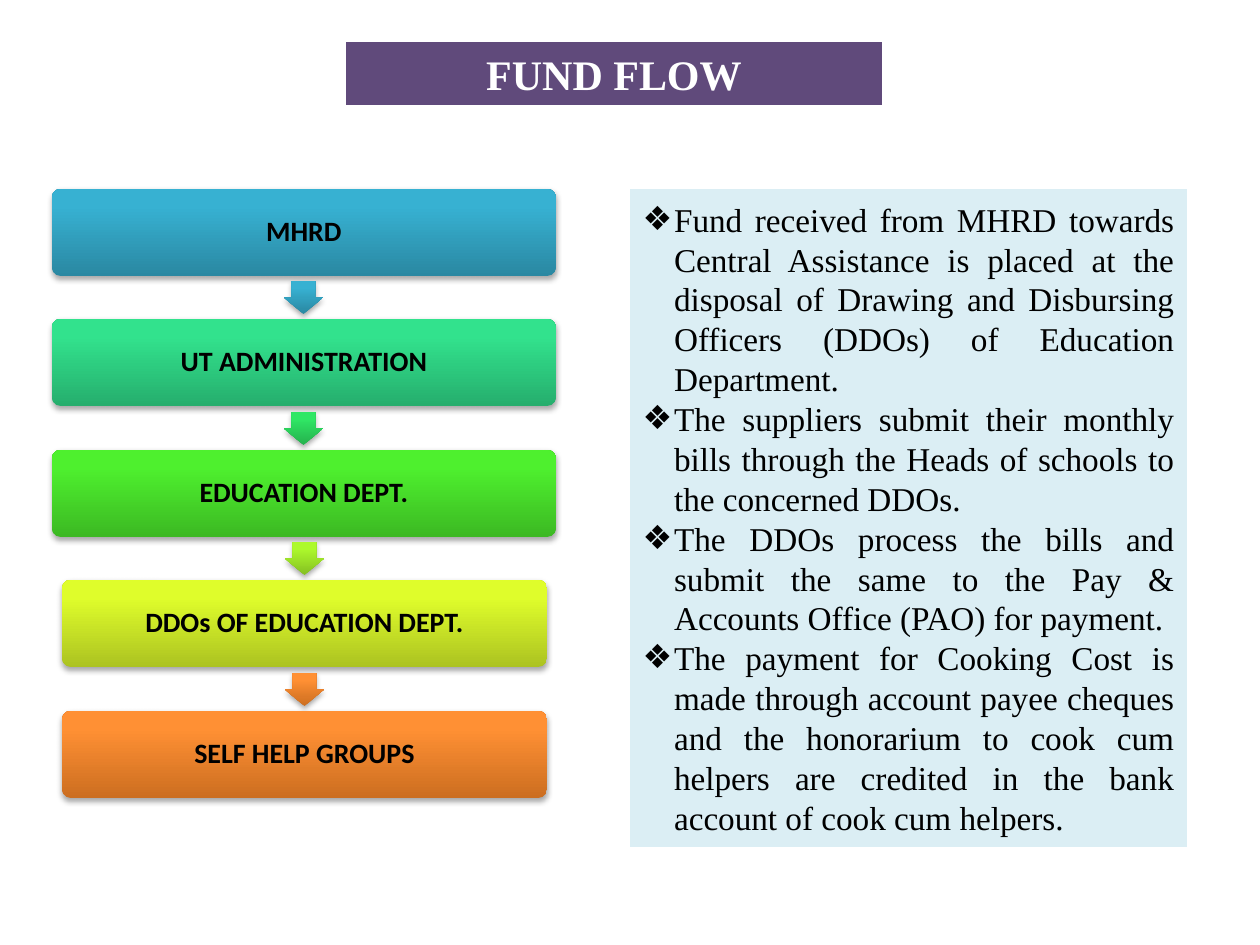
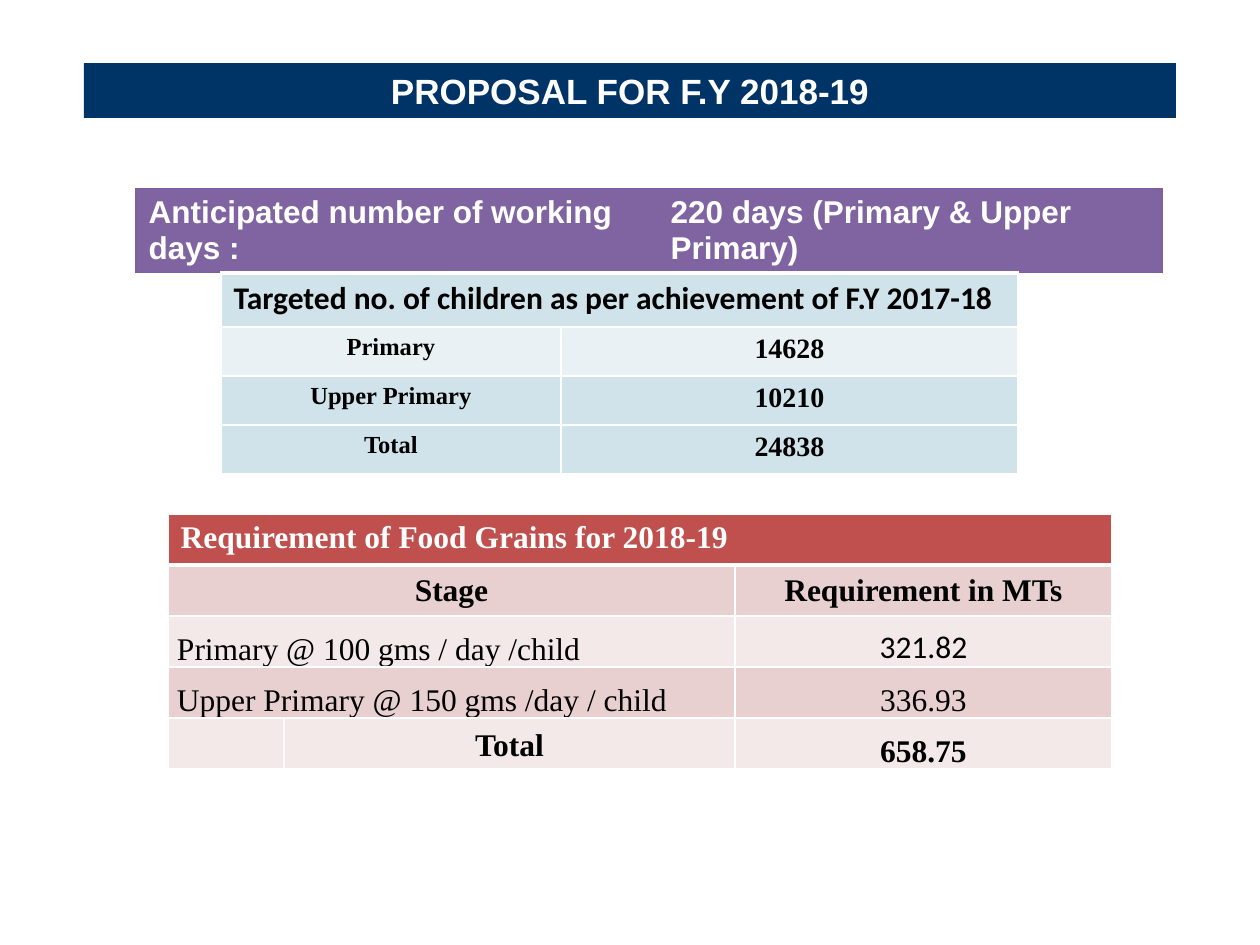
from lxml.etree import SubElement
from pptx import Presentation
from pptx.dml.color import RGBColor
from pptx.enum.shapes import MSO_SHAPE
from pptx.enum.text import MSO_ANCHOR, MSO_AUTO_SIZE, PP_ALIGN
from pptx.oxml.ns import qn
from pptx.util import Emu, Pt

PX_PER_INCH = 126
NO_TABLE_STYLE = "{2D5ABB26-0587-4C30-8999-92F81FD0307C}"
SERIF, SANS, LABEL = "Times New Roman", "Arial", "Calibri"

COLORS = {
    "white": "FFFFFF", "black": "000000",
    "plum": "604A7B", "navy": "003366", "list": "DBEEF4",
    "violet": "8064A2", "violet_line": "7D60A0",
    "blue_band": "D0E3EA", "blue_pale": "E9F1F5",
    "red": "C0504D", "red_band": "E8D0D0", "red_pale": "F4E9E9",
}

# label, left, width, (dark, light) of the box, (dark, light) of the arrow above
STEPS = [
    ("MHRD", 52, 504, ("2A88A2", "37B1D2"), None),
    ("UT ADMINISTRATION", 52, 504, ("26AE6D", "32E28D"), ("2A88A2", "37B1D2")),
    ("EDUCATION DEPT.", 52, 504, ("3CB923", "4EF02E"), ("25B24E", "30E765")),
    ("DDOs OF EDUCATION DEPT.", 62, 485, ("ACC321", "DFFD2B"), ("85C022", "ADF92C")),
    ("SELF HELP GROUPS", 62, 485, ("CC6E20", "FF9034"), ("CC6E20", "FF9034")),
]

FUND_POINTS = [
    "Fund received from MHRD towards Central Assistance is placed at the "
    "disposal of Drawing and Disbursing Officers (DDOs) of Education Department.",
    "The suppliers submit their monthly bills through the Heads of schools "
    "to the concerned DDOs.",
    "The DDOs process the bills and submit the same to the Pay & Accounts "
    "Office (PAO) for payment.",
    "The payment for Cooking Cost is made through account payee cheques and "
    "the honorarium to cook cum helpers are credited in the bank account of "
    "cook cum helpers.",
]


def px(n):
    return Emu(round(n * 914400 / PX_PER_INCH))


def rgb(hex_color):
    return RGBColor.from_string(hex_color)


def place(sp, x, y, w, h):
    sp.left, sp.top, sp.width, sp.height = px(x), px(y), px(w), px(h)


def add_run(p, text, size, font, color="black", bold=False):
    r = p.add_run()
    r.text = text
    r.font.size, r.font.name, r.font.bold = Pt(size), font, bold
    r.font.color.rgb = rgb(COLORS[color])


def solid(fill, color):
    fill.solid()
    fill.fore_color.rgb = rgb(COLORS[color])


def title_band(s, text, box, color, size, font):
    sp = s.shapes.title
    place(sp, *box)
    solid(sp.fill, color)
    tf = sp.text_frame
    tf.auto_size, tf.vertical_anchor = MSO_AUTO_SIZE.NONE, MSO_ANCHOR.MIDDLE
    p = tf.paragraphs[0]
    p.alignment = PP_ALIGN.CENTER
    add_run(p, text, size, font, "white", True)


def bullet_list(sp, points, box):
    place(sp, *box)
    solid(sp.fill, "list")
    tf = sp.text_frame
    tf.auto_size, tf.vertical_anchor = MSO_AUTO_SIZE.NONE, MSO_ANCHOR.MIDDLE
    for i, point in enumerate(points):
        p = tf.add_paragraph() if i else tf.paragraphs[0]
        p.alignment, p.space_before = PP_ALIGN.JUSTIFY, Pt(0)
        pPr = p._p.get_or_add_pPr()
        pPr.set("marL", "228600")
        pPr.set("indent", "-228600")
        SubElement(pPr, qn("a:buChar"), char="❖")
        add_run(p, point, 19, SERIF)


def gradient_shape(s, kind, box, shades, adjustments):
    """Add a shape that is dark at the foot, light at the top, with a soft shadow."""
    sp = s.shapes.add_shape(kind, *map(px, box))
    for i, value in enumerate(adjustments):
        sp.adjustments[i] = value
    sp.line.fill.background()
    sp.fill.gradient()
    sp.fill.gradient_angle = 90
    for stop, position, shade in zip(sp.fill.gradient_stops, (0, 0.8), shades):
        stop.position, stop.color.rgb = position, rgb(shade)
    sp.shadow.inherit = False
    effects = sp._element.spPr.find(qn("a:effectLst"))
    shadow = SubElement(effects, qn("a:outerShdw"), blurRad="40000",
                        dist="23000", dir="5400000", rotWithShape="0")
    color = SubElement(shadow, qn("a:srgbClr"), val=COLORS["black"])
    SubElement(color, qn("a:alpha"), val="35000")
    return sp


def flow_chart(s, steps, top=189, last_top=711, box_h=87):
    arrow_w, arrow_h = 39, 33
    for i, (label, x, w, shades, arrow_shades) in enumerate(steps):
        y = top + (last_top - top) * i // (len(steps) - 1)
        if arrow_shades:
            arrow_box = (x + (w - arrow_w) // 2, y - 38, arrow_w, arrow_h)
            gradient_shape(s, MSO_SHAPE.DOWN_ARROW, arrow_box, arrow_shades, (0.6, 0.5))
        sp = gradient_shape(s, MSO_SHAPE.ROUNDED_RECTANGLE, (x, y, w, box_h), shades, (0.1,))
        tf = sp.text_frame
        tf.vertical_anchor = MSO_ANCHOR.MIDDLE
        p = tf.paragraphs[0]
        p.alignment, p.line_spacing = PP_ALIGN.CENTER, 0.9
        add_run(p, label, 16, LABEL, bold=True)


def add_grid(s, x, y, col_widths, row_heights):
    """Add an unstyled table with the given column widths and row heights."""
    frame = s.shapes.add_table(len(row_heights), len(col_widths), px(x), px(y),
                               px(sum(col_widths)), px(sum(row_heights)))
    table = frame.table
    table.first_row = table.horz_banding = False
    table._tbl.tblPr.find(qn("a:tableStyleId")).text = NO_TABLE_STYLE
    for column, width in zip(table.columns, col_widths):
        column.width = px(width)
    for row, height in zip(table.rows, row_heights):
        row.height = px(height)
    return table


def set_borders(cell, color="white", **widths):
    """Draw the named sides (L, R, T, B), each with its width in points."""
    tcPr = cell._tc.get_or_add_tcPr()
    for side in "LRTB":
        if side in widths:
            ln = SubElement(tcPr, qn(f"a:ln{side}"), w=str(Pt(widths[side])))
            fill = SubElement(ln, qn("a:solidFill"))
            SubElement(fill, qn("a:srgbClr"), val=COLORS[color])


def white_grid(table, fills, thick):
    """Rule a table in white; thick lists the (row, side) pairs at 3 pt."""
    for i, (row, fill) in enumerate(zip(table.rows, fills)):
        for cell in row.cells:
            set_borders(cell, **{side: 3 if (i, side) in thick else 1 for side in "LRTB"})
            solid(cell.fill, fill)


def write_cell(cell, text, size=18, font=SERIF, color="black", bold=True, align=None,
               anchor=MSO_ANCHOR.TOP, margins=None, spacing=None):
    """Write one run; margins are left, top, right, bottom in px."""
    cell.vertical_anchor = anchor
    if margins:
        (cell.margin_left, cell.margin_top,
         cell.margin_right, cell.margin_bottom) = map(px, margins)
    p = cell.text_frame.paragraphs[0]
    p.alignment, p.line_spacing = align, spacing
    add_run(p, text, size, font, color, bold)


def working_days_table(s):
    table = add_grid(s, 136, 189, (522, 504), (40,))
    texts = ("Anticipated number of working days :", "220 days (Primary & Upper Primary)")
    for cell, text, outer in zip(table.rows[0].cells, texts, "LR"):
        set_borders(cell, "violet_line", T=0.75, B=0.75, **{outer: 0.75})
        solid(cell.fill, "violet")
        write_cell(cell, text, font=SANS, color="white")


def children_table(s):
    table = add_grid(s, 221, 273, (340, 457), (54, 49, 49, 49))
    white_grid(table, ("blue_band", "blue_pale", "blue_band", "blue_band"), {(0, "T")})
    table.cell(0, 0).merge(table.cell(0, 1))
    write_cell(table.cell(0, 0), "Targeted no. of children as per achievement of F.Y 2017-18",
               font=LABEL)
    counts = [("Primary", "14628"), ("Upper Primary", "10210"), ("Total", "24838")]
    for i, (stage, count) in enumerate(counts, 1):
        write_cell(table.cell(i, 0), stage, 14, align=PP_ALIGN.CENTER)
        write_cell(table.cell(i, 1), count, 16, align=PP_ALIGN.CENTER)


def food_grains_table(s):
    table = add_grid(s, 168, 514, (116, 451, 377), (51,) * 5)
    white_grid(table, ("red", "red_band", "red_pale", "red_band", "red_pale"),
               {(0, "B"), (1, "T")})
    table.cell(0, 0).merge(table.cell(0, 2))
    for i in (1, 2, 3):
        table.cell(i, 0).merge(table.cell(i, 1))
    side, thin = (9, 0, 9, 0), (1, 1, 1, 0)
    middle = dict(align=PP_ALIGN.CENTER, anchor=MSO_ANCHOR.MIDDLE, margins=side)
    amount = dict(align=PP_ALIGN.CENTER, anchor=MSO_ANCHOR.BOTTOM, margins=thin)

    write_cell(table.cell(0, 0), "Requirement of Food Grains for 2018-19", color="white")
    write_cell(table.cell(1, 0), "Stage", **middle)
    write_cell(table.cell(1, 2), "Requirement in MTs", **middle)
    needs = [("Primary @ 100 gms / day /child", "321.82", LABEL),
             ("Upper Primary @ 150 gms /day / child", "336.93", SERIF)]
    for i, (stage, tonnes, font) in enumerate(needs, 2):
        write_cell(table.cell(i, 0), stage, bold=False, anchor=MSO_ANCHOR.BOTTOM,
                   margins=side, spacing=1.15)
        write_cell(table.cell(i, 2), tonnes, font=font, bold=False, **amount)
    write_cell(table.cell(4, 1), "Total", spacing=1.15, **middle)
    write_cell(table.cell(4, 2), "658.75", **amount)


def fund_flow_slide(prs):
    s = prs.slides.add_slide(prs.slide_layouts[1])
    title_band(s, "FUND FLOW", (346, 42, 536, 63), "plum", 24, SERIF)
    bullet_list(s.placeholders[1], FUND_POINTS, (630, 189, 557, 658))
    flow_chart(s, STEPS)


def proposal_slide(prs):
    s = prs.slides.add_slide(prs.slide_layouts[5])
    title_band(s, "PROPOSAL FOR F.Y 2018-19", (84, 63, 1092, 55), "navy", 20, SANS)
    working_days_table(s)
    children_table(s)
    food_grains_table(s)


def main():
    prs = Presentation()
    prs.slide_width, prs.slide_height = px(1260), px(945)
    fund_flow_slide(prs)
    proposal_slide(prs)
    prs.save("out.pptx")


if __name__ == "__main__":
    main()
